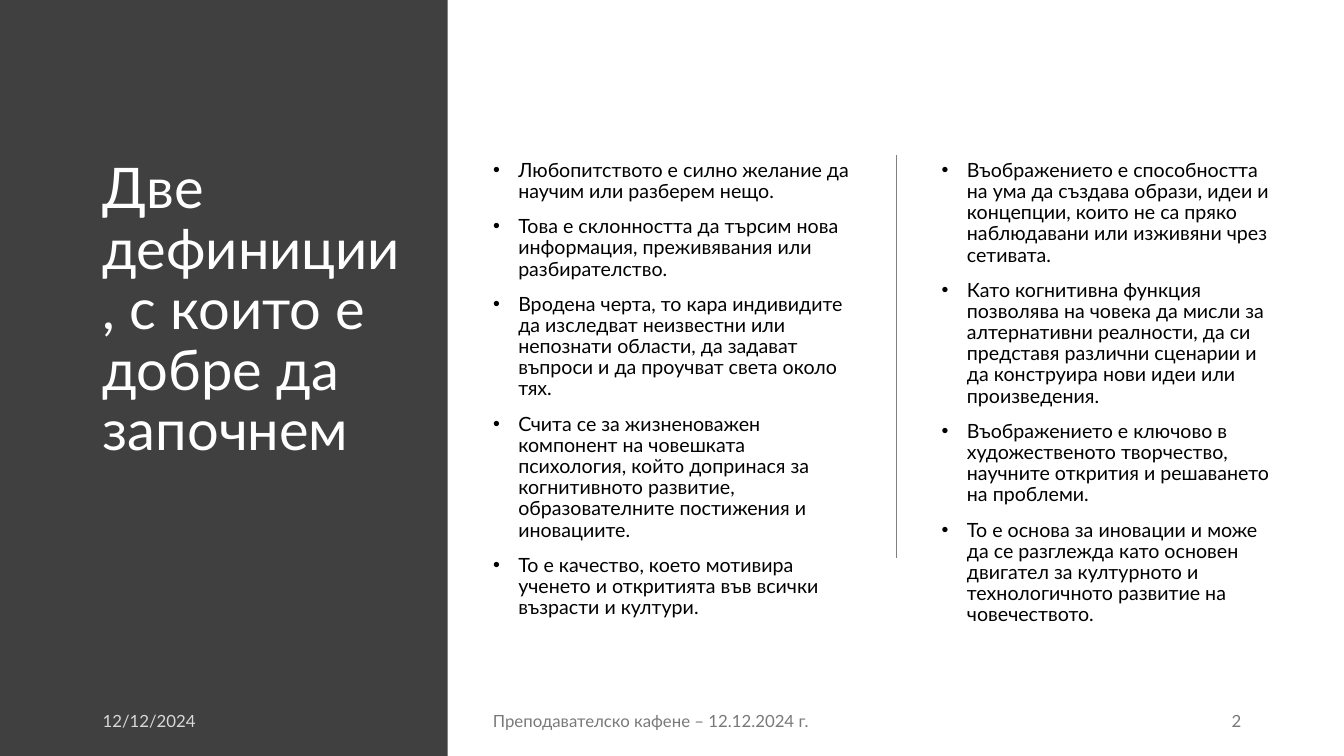
"""Build a slide with two bulleted definitions beside a dark title panel."""
from dataclasses import dataclass

import lxml.etree
import pptx
import pptx.dml.color
import pptx.enum.shapes
import pptx.enum.text
import pptx.oxml.ns
import pptx.util

Inches = pptx.util.Inches
Pt = pptx.util.Pt
RGBColor = pptx.dml.color.RGBColor
Align = pptx.enum.text.PP_ALIGN
Anchor = pptx.enum.text.MSO_ANCHOR
qn = pptx.oxml.ns.qn

WHITE = RGBColor(0xFF, 0xFF, 0xFF)
BLACK = RGBColor(0x00, 0x00, 0x00)
PANEL_GRAY = RGBColor(0x40, 0x40, 0x40)
RULE_GRAY = RGBColor(0x80, 0x80, 0x80)
DATE_GRAY = RGBColor(0xD9, 0xD9, 0xD9)
FOOTER_GRAY = RGBColor(0x79, 0x79, 0x79)
FONT = "Lato"
CONTENT_TOP, CONTENT_HEIGHT = 1.54, 4.77
FOOTER_TOP, FOOTER_HEIGHT = 6.95, 0.4
PANEL_WIDTH, SLIDE_HEIGHT = 4.44, 7.5
RULE_LEFT, RULE_LENGTH = 8.89, 4


@dataclass(frozen=True)
class Content:
    """Text for one template placeholder."""

    index: int
    left: float
    width: float
    size: int
    color: RGBColor
    lines: tuple[str, ...]
    bulleted: bool = True


@dataclass(frozen=True)
class Footer:
    """One label on the bottom row."""

    text: str
    left: float
    width: float
    color: RGBColor
    align: Align = Align.LEFT


CONTENTS = (
    Content(0, 0.92, 3.17, 40, WHITE,
            ("Две дефиниции, с които е добре да започнем",), bulleted=False),
    Content(1, 4.79, 3.75, 14, BLACK, (
        "Любопитството е силно желание да научим или разберем нещо.",
        "Това е склонността да търсим нова информация, преживявания или разбирателство.",
        "Вродена черта, то кара индивидите да изследват неизвестни или непознати области, "
        "да задават въпроси и да проучват света около тях.",
        "Счита се за жизненоважен компонент на човешката психология, който допринася за "
        "когнитивното развитие, образователните постижения и иновациите.",
        "То е качество, което мотивира ученето и откритията във всички възрасти и култури.",
    )),
    Content(2, 9.24, 3.5, 14, BLACK, (
        "Въображението е способността на ума да създава образи, идеи и концепции, "
        "които не са пряко наблюдавани или изживяни чрез сетивата.",
        "Като когнитивна функция позволява на човека да мисли за алтернативни реалности, "
        "да си представя различни сценарии и да конструира нови идеи или произведения.",
        "Въображението е ключово в художественото творчество, научните открития "
        "и решаването на проблеми.",
        "То е основа за иновации и може да се разглежда като основен двигател за "
        "културното и технологичното развитие на човечеството.",
    )),
)
FOOTERS = (
    Footer("12/12/2024", 0.92, 3, DATE_GRAY),
    Footer("Преподавателско кафене – 12.12.2024 г.", 4.79, 4.44, FOOTER_GRAY),
    Footer("2", 10.06, 2.35, FOOTER_GRAY, Align.RIGHT),
)


def style_font(paragraph, size: int, color: RGBColor) -> None:
    """Set the typeface, size and colour of a paragraph."""
    paragraph.font.name = FONT
    paragraph.font.size = Pt(size)
    paragraph.font.color.rgb = color


def add_bullet(paragraph) -> None:
    """Give a paragraph a round bullet and a hanging indent."""
    properties = paragraph._p.get_or_add_pPr()
    properties.set("marL", str(Inches(0.25)))
    properties.set("indent", str(-Inches(0.25)))
    lxml.etree.SubElement(properties, qn("a:buFont"), typeface="Arial")
    lxml.etree.SubElement(properties, qn("a:buChar"), char="•")


def fill_placeholder(page, content: Content) -> None:
    """Place and fill a title or list placeholder."""
    box = page.placeholders[content.index]
    box.left, box.top = Inches(content.left), Inches(CONTENT_TOP)
    box.width, box.height = Inches(content.width), Inches(CONTENT_HEIGHT)
    frame = box.text_frame
    frame.text = "\n".join(content.lines)
    frame.word_wrap = True
    frame.auto_size = pptx.enum.text.MSO_AUTO_SIZE.NONE
    frame.vertical_anchor = Anchor.TOP
    for number, paragraph in enumerate(frame.paragraphs):
        if content.bulleted:
            add_bullet(paragraph)
        paragraph.alignment = Align.LEFT
        paragraph.line_spacing = 0.9
        paragraph.space_before = Pt(10 if number else 0)
        style_font(paragraph, content.size, content.color)


def add_panel(page) -> None:
    """Draw the dark panel behind the title."""
    panel = page.shapes.add_shape(
        pptx.enum.shapes.MSO_SHAPE.RECTANGLE, 0, 0,
        Inches(PANEL_WIDTH), Inches(SLIDE_HEIGHT))
    panel.shadow.inherit = False
    panel.fill.solid()
    panel.fill.fore_color.rgb = PANEL_GRAY
    panel.line.fill.background()
    page.shapes.element.insert(2, panel.element)


def add_divider(page) -> None:
    """Draw the rule between the two lists."""
    rule = page.shapes.add_connector(
        pptx.enum.shapes.MSO_CONNECTOR.STRAIGHT,
        Inches(RULE_LEFT), Inches(CONTENT_TOP),
        Inches(RULE_LEFT), Inches(CONTENT_TOP + RULE_LENGTH))
    rule.line.color.rgb = RULE_GRAY
    rule.line.width = Pt(1)
    lxml.etree.SubElement(rule.element.spPr, qn("a:effectLst"))


def add_footer(page, footer: Footer) -> None:
    """Write one label on the bottom row."""
    box = page.shapes.add_textbox(
        Inches(footer.left), Inches(FOOTER_TOP),
        Inches(footer.width), Inches(FOOTER_HEIGHT))
    frame = box.text_frame
    frame.word_wrap = True
    frame.vertical_anchor = Anchor.MIDDLE
    paragraph = frame.paragraphs[0]
    paragraph.text = footer.text
    paragraph.alignment = footer.align
    style_font(paragraph, 12, footer.color)


def main() -> None:
    """Assemble and save the deck."""
    deck = pptx.Presentation()
    deck.slide_width, deck.slide_height = Inches(13.33), Inches(SLIDE_HEIGHT)
    page = deck.slides.add_slide(deck.slide_layouts.get_by_name("Two Content"))
    for content in CONTENTS:
        fill_placeholder(page, content)
    add_panel(page)
    add_divider(page)
    for footer in FOOTERS:
        add_footer(page, footer)
    for box in list(page.placeholders):
        if not box.text_frame.text:
            box.element.getparent().remove(box.element)
    deck.save("out.pptx")


if __name__ == "__main__":
    main()
